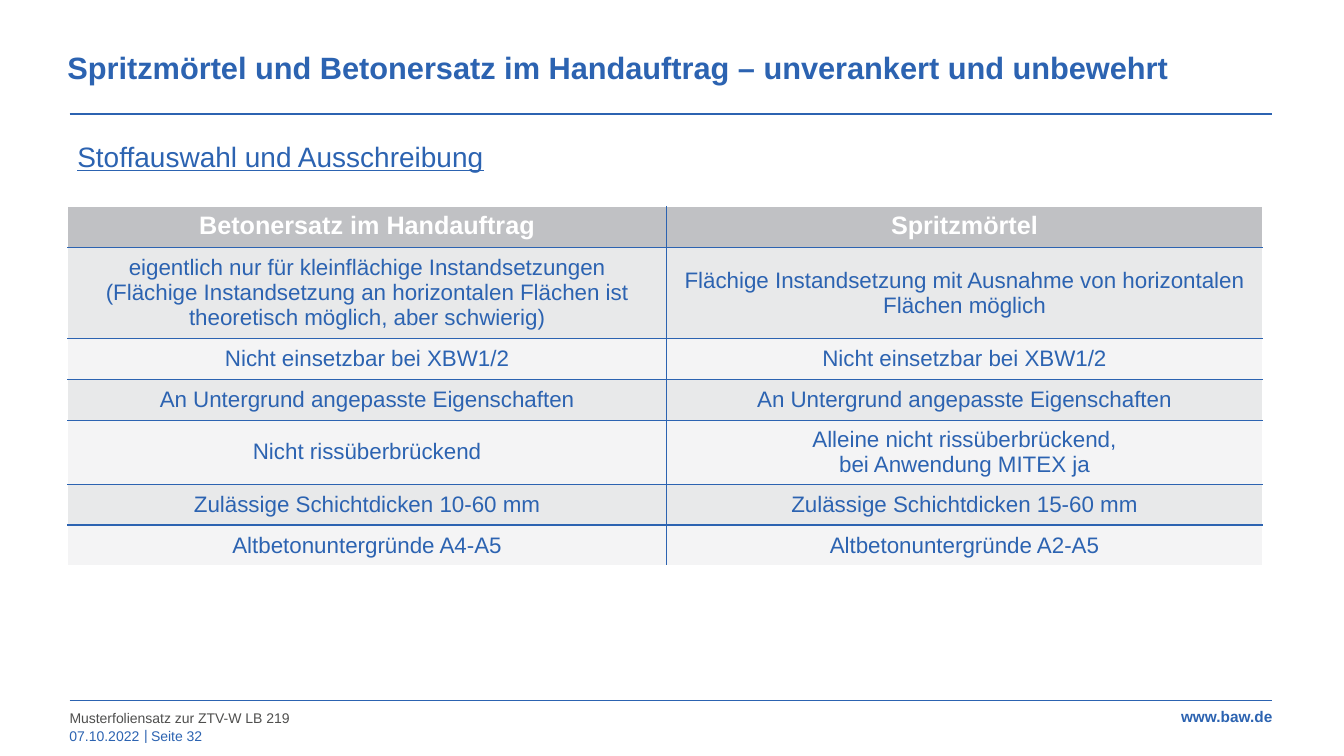
from lxml import etree
from pptx import Presentation
from pptx.dml.color import RGBColor
from pptx.enum import shapes, text
from pptx.oxml import ns
from pptx.util import Pt

BLUE = RGBColor(0x2C, 0x63, 0xB1)
DARK = RGBColor(0x4F, 0x4F, 0x4E)
WHITE = RGBColor(0xFF, 0xFF, 0xFF)
HEADER_GREY = RGBColor(0xC0, 0xC1, 0xC4)
BANDS = [RGBColor(0xF4, 0xF4, 0xF5), RGBColor(0xE8, 0xE9, 0xEA)]
FONT = "Arial"
LEFT, RIGHT = text.PP_ALIGN.LEFT, text.PP_ALIGN.RIGHT

# Content
TITLE = "Spritzmörtel und Betonersatz im Handauftrag – unverankert und unbewehrt"
SUBTITLE = "Stoffauswahl und Ausschreibung"
# Row height, then one list of paragraphs per cell
ROWS = [
    (29.2, ["Betonersatz im Handauftrag"], ["Spritzmörtel"]),
    (65.2, ["eigentlich nur für kleinflächige Instandsetzungen",
            "(Flächige Instandsetzung an horizontalen Flächen ist "
            "theoretisch möglich, aber schwierig)"],
     ["Flächige Instandsetzung mit Ausnahme von horizontalen Flächen möglich"]),
    (29.2, ["Nicht einsetzbar bei XBW1/2"], ["Nicht einsetzbar bei XBW1/2"]),
    (29.2, ["An Untergrund angepasste Eigenschaften"],
     ["An Untergrund angepasste Eigenschaften"]),
    (45.6, ["Nicht rissüberbrückend"],
     ["Alleine nicht rissüberbrückend,", "bei Anwendung MITEX ja"]),
    (29.2, ["Zulässige Schichtdicken 10-60 mm"], ["Zulässige Schichtdicken 15-60 mm"]),
    (29.2, ["Altbetonuntergründe A4-A5"], ["Altbetonuntergründe A2-A5"]),
]
COLUMN_WIDTHS = [427.7, 426.2]
# Text, left, top, width, size, colour, bold, alignment
FOOTER = [
    ("www.baw.de", 838.8, 506.2, 70.6, 11, BLUE, True, RIGHT),
    ("Musterfoliensatz zur ZTV-W LB 219", 49.7, 506.9, 776.9, 10, DARK, False, LEFT),
    ("07.10.2022", 49.7, 519.8, 53, 10, BLUE, False, LEFT),
    ("|", 103, 519.1, 5, 10, BLUE, False, LEFT),
    ("Seite 32", 108, 519.8, 51, 10, BLUE, False, LEFT),
]
RULES = [(81.5, 1.25), (500.4, 1)]  # y, line width
RULE_LEFT, RULE_RIGHT = 49.7, 909.4

presentation = Presentation()
presentation.slide_width, presentation.slide_height = Pt(960.5), Pt(540)
slide = presentation.slides.add_slide(presentation.slide_layouts[6])


def style(paragraph, size, color, bold=False, alignment=LEFT):
    paragraph.alignment = alignment
    font = paragraph.font
    font.name, font.size, font.bold = FONT, Pt(size), bold
    font.color.rgb = color


def add_text(content, left, top, width, height, size, color,
             bold=False, alignment=LEFT, inset=0, anchor=text.MSO_ANCHOR.TOP):
    frame = slide.shapes.add_textbox(Pt(left), Pt(top), Pt(width), Pt(height)).text_frame
    frame.word_wrap = True
    frame.vertical_anchor = anchor
    frame.margin_left = frame.margin_right = Pt(inset)
    frame.margin_top = frame.margin_bottom = Pt(inset / 2)
    paragraph = frame.paragraphs[0]
    paragraph.text = content
    style(paragraph, size, color, bold, alignment)
    return paragraph


def add_borders(cell, sides):
    for tag, color in sides.items():
        line = etree.SubElement(cell._tc.get_or_add_tcPr(), ns.qn("a:" + tag), w=str(Pt(1)))
        fill = etree.SubElement(line, ns.qn("a:solidFill"))
        etree.SubElement(fill, ns.qn("a:srgbClr"), val=str(color))


# Rules above and below the content
for y, width in RULES:
    rule = slide.shapes.add_connector(
        shapes.MSO_CONNECTOR.STRAIGHT, Pt(RULE_LEFT), Pt(y), Pt(RULE_RIGHT), Pt(y))
    rule.line.color.rgb = BLUE
    rule.line.width = Pt(width)
    etree.SubElement(rule._element.spPr, ns.qn("a:effectLst"))

# Title and subtitle
title = add_text(TITLE, 48.2, 32.4, 860.4, 33.8, 22, BLUE, bold=True)
title.line_spacing = 1.1
subtitle = add_text(SUBTITLE, 48.2, 84.2, 878.4, 38.9, 20, BLUE, inset=7.2)
subtitle.line_spacing = 1.5
subtitle.font.underline = True

# Comparison table: blue inner borders, white outer ones
table = slide.shapes.add_table(
    len(ROWS), len(COLUMN_WIDTHS), Pt(48.5), Pt(147.4),
    Pt(sum(COLUMN_WIDTHS)), Pt(sum(row[0] for row in ROWS))).table
for column, width in zip(table.columns, COLUMN_WIDTHS):
    column.width = Pt(width)
for r, (height, *cells) in enumerate(ROWS):
    table.rows[r].height = Pt(height)
    header, last = r == 0, r == len(ROWS) - 1
    for c, lines in enumerate(cells):
        cell = table.cell(r, c)
        add_borders(cell, {
            "lnL": BLUE if c else WHITE,
            "lnR": WHITE if c else BLUE,
            "lnT": WHITE if header else BLUE,
            "lnB": WHITE if last else BLUE,
        })
        cell.fill.solid()
        cell.fill.fore_color.rgb = HEADER_GREY if header else BANDS[r % 2]
        cell.vertical_anchor = text.MSO_ANCHOR.TOP if header else text.MSO_ANCHOR.MIDDLE
        cell.text = "\n".join(lines)
        for paragraph in cell.text_frame.paragraphs:
            style(paragraph, 18 if header else 16, WHITE if header else BLUE,
                  header, text.PP_ALIGN.CENTER)

# Footer
for content, left, top, width, size, color, bold, alignment in FOOTER:
    add_text(content, left, top, width, 11.5, size, color, bold, alignment,
             anchor=text.MSO_ANCHOR.MIDDLE)

presentation.save("out.pptx")
